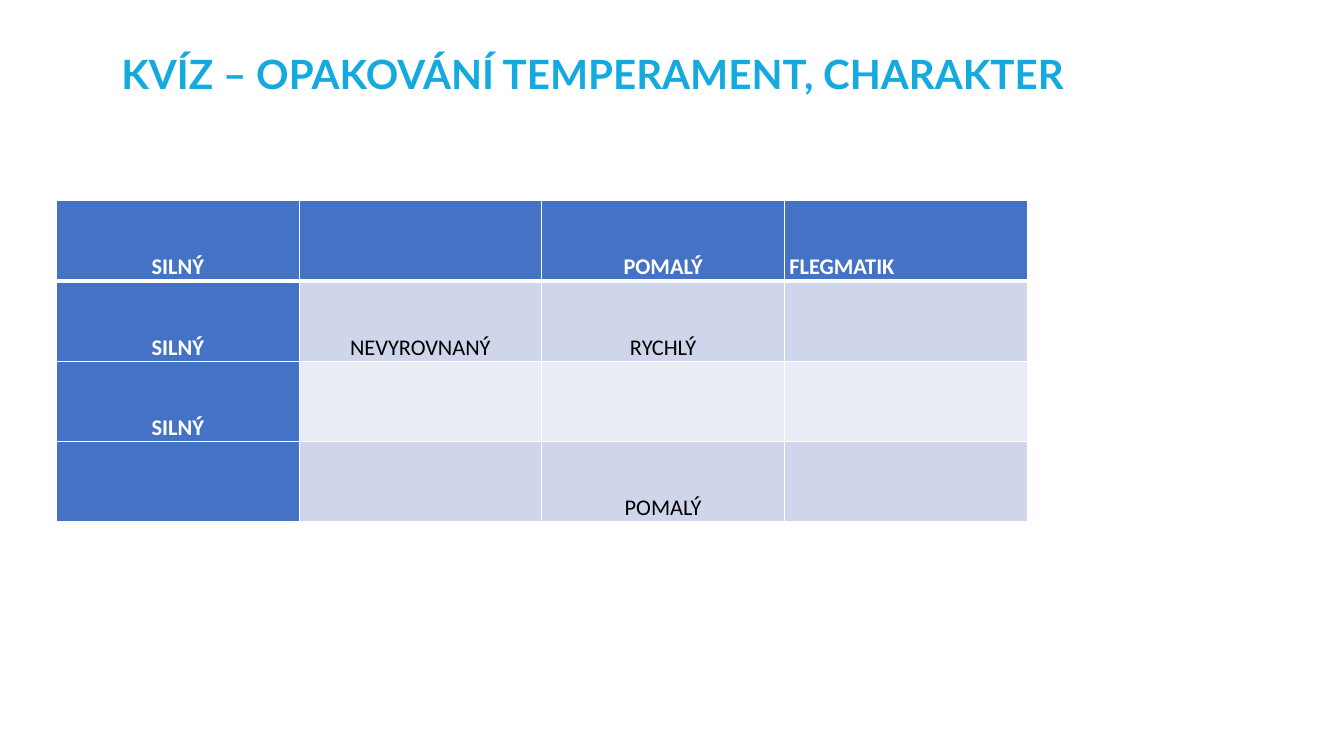
from lxml import etree
from pptx import Presentation
from pptx.dml.color import RGBColor
from pptx.enum.text import MSO_ANCHOR, MSO_AUTO_SIZE, PP_ALIGN
from pptx.oxml.ns import qn
from pptx.util import Pt

LEFT, CENTER = PP_ALIGN.LEFT, PP_ALIGN.CENTER
MIDDLE, BOTTOM = MSO_ANCHOR.MIDDLE, MSO_ANCHOR.BOTTOM
NO_FIT = MSO_AUTO_SIZE.NONE

COLORS = {
    "title": "14AAE0",
    "head": "4472C4",
    "odd": "CFD5EA",
    "even": "E9EBF5",
    "white": "FFFFFF",
    "black": "000000",
}

TITLE = "KVÍZ – OPAKOVÁNÍ TEMPERAMENT, CHARAKTER"
ROWS = [
    ["SILNÝ", "", "POMALÝ", "FLEGMATIK"],
    ["SILNÝ", "NEVYROVNANÝ", "RYCHLÝ", ""],
    ["SILNÝ", "", "", ""],
    ["", "", "POMALÝ", ""],
]


def color(name):
    return RGBColor.from_string(COLORS[name])


def write(frame, text, font="Calibri", size=16, fill="black", bold=False,
          align=CENTER, line=1.15, after=10):
    para = frame.paragraphs[0]
    para.alignment = align
    para.line_spacing = line
    para.space_before = Pt(0)
    para.space_after = Pt(after)
    run = para.add_run()
    run.text = text
    run.font.name = font
    run.font.size = Pt(size)
    run.font.bold = bold
    run.font.color.rgb = color(fill)


def border(cell, widths):
    """Draw white edges; widths maps each side to points."""
    props = cell._tc.get_or_add_tcPr()
    for side, width in widths.items():
        edge = etree.SubElement(props, qn(f"a:ln{side}"), w=str(Pt(width)))
        solid = etree.SubElement(edge, qn("a:solidFill"))
        etree.SubElement(solid, qn("a:srgbClr"), val=COLORS["white"])


def add_title(slide, x, y, w, h):
    title = slide.shapes.title
    title.left, title.top, title.width, title.height = map(Pt, (x, y, w, h))
    frame = title.text_frame
    frame.word_wrap = True
    frame.auto_size = NO_FIT
    frame.vertical_anchor = MIDDLE
    write(frame, TITLE, font="Lato", size=28.8, fill="title", bold=True,
          line=0.9, after=0)


def add_quiz(slide, x, y, w, h):
    count = len(ROWS[0])
    table = slide.shapes.add_table(
        len(ROWS), count, Pt(x), Pt(y), Pt(w), Pt(h)).table
    table.first_col = True
    for col in table.columns:
        col.width = Pt(w / count)
    for r, row in enumerate(ROWS):
        table.rows[r].height = Pt(h / len(ROWS))
        for c, text in enumerate(row):
            cell = table.cell(r, c)
            head = r == 0 or c == 0
            border(cell, {"L": 1, "R": 1, "T": 3 if r == 1 else 1,
                          "B": 3 if r == 0 else 1})
            # Header row and column, then banded body
            band = "head" if head else "odd" if r % 2 else "even"
            cell.fill.solid()
            cell.fill.fore_color.rgb = color(band)
            cell.vertical_anchor = BOTTOM
            cell.margin_left = cell.margin_right = Pt(3.6)
            cell.margin_top = cell.margin_bottom = Pt(0)
            if text:
                write(cell.text_frame, text, bold=head,
                      fill="white" if head else "black",
                      align=LEFT if c == count - 1 else CENTER)


def main():
    deck = Presentation()
    deck.slide_width, deck.slide_height = Pt(960), Pt(540)
    slide = deck.slides.add_slide(deck.slide_layouts[5])
    add_title(slide, 25.2, 28.8, 796.3, 51.1)
    add_quiz(slide, 40.3, 143.3, 693.4, 229.6)
    deck.save("out.pptx")


if __name__ == "__main__":
    main()
